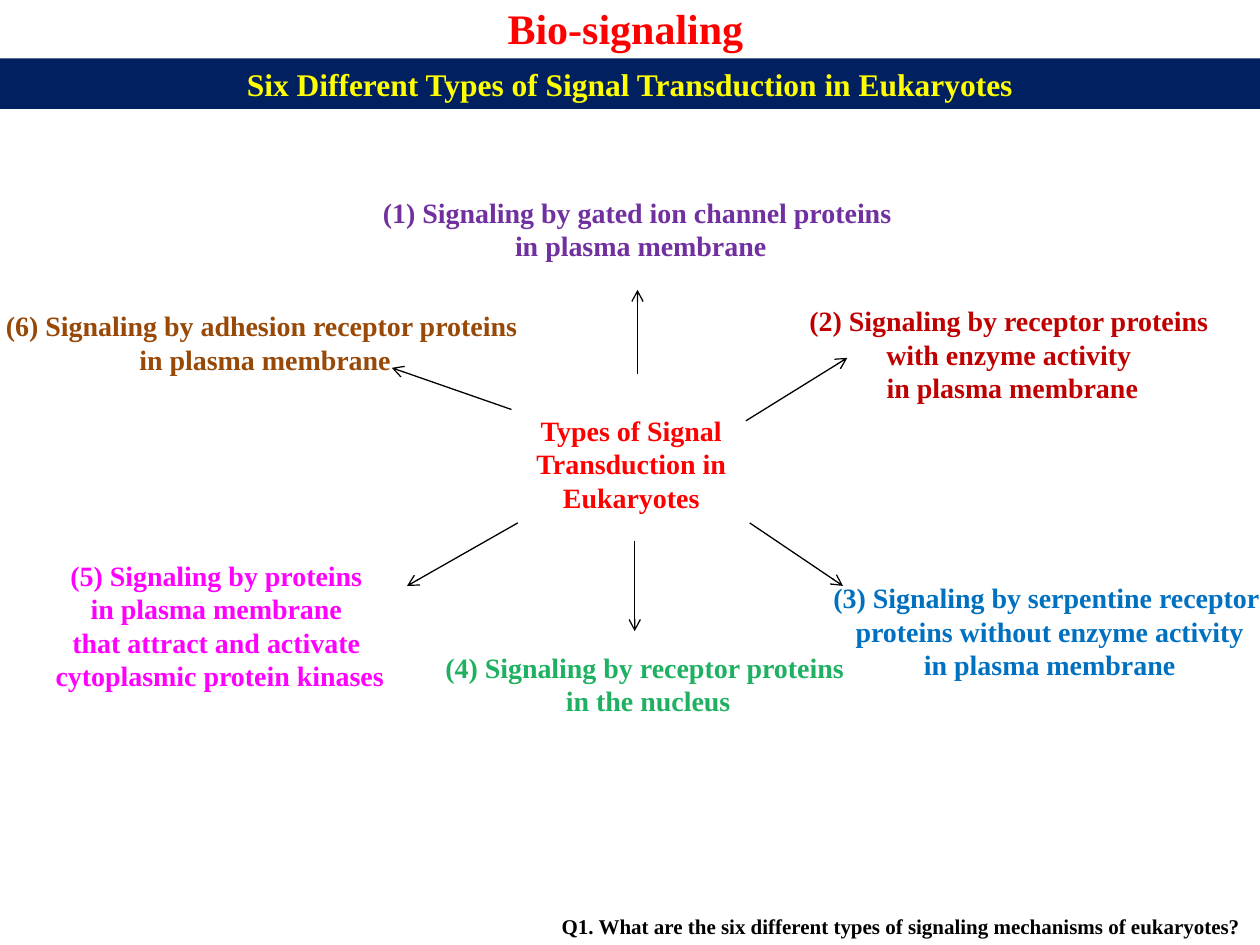
"""Build a slide on the six types of signal transduction in eukaryotes."""
import pptx
import pptx.dml.color
import pptx.enum.shapes
import pptx.enum.text
import pptx.oxml
import pptx.oxml.ns
import pptx.util

Pt = pptx.util.Pt
ALIGN = pptx.enum.text.PP_ALIGN
FONT = "Times New Roman"
COLORS = {
    "red": "FF0000",
    "navy": "002060",
    "yellow": "FFFF00",
    "black": "000000",
    "purple": "7030A0",
    "crimson": "C00000",
    "blue": "0070C0",
    "green": "1FB161",
    "magenta": "FF00FF",
    "brown": "984807",
}
SIGNALING_TYPES = [
    ("(1) Signaling by gated ion channel proteins \nin plasma membrane",
     "purple", (209.5, 108, 313.2, 46), (364.3, 213.8, 364.3, 165.6)),
    ("(2) Signaling by receptor proteins \nwith enzyme activity \nin plasma membrane",
     "crimson", (453.6, 169.9, 249.8, 65.5), (426.2, 240.5, 484.2, 204.5)),
    ("(3) Signaling by serpentine receptor \nproteins without enzyme activity\nin plasma membrane",
     "blue", (467.3, 328.3, 265, 65.5), (428.4, 298.8, 481.7, 334.8)),
    ("(4) Signaling by receptor proteins \nin the nucleus",
     "green", (245.5, 367.9, 249.8, 46), (362.7, 308.9, 362.7, 360.7)),
    ("(5) Signaling by proteins \nin plasma membrane \nthat attract and activate \ncytoplasmic protein kinases",
     "magenta", (23, 315.4, 205.2, 85), (295.9, 298.8, 232.6, 334.8)),
    ("(6) Signaling by adhesion receptor proteins \nin plasma membrane",
     "brown", (-5.8, 172.8, 314.6, 46), (292.3, 234, 223.9, 210.2)),
]


def rgb(name):
    """Return the named colour."""
    return pptx.dml.color.RGBColor.from_string(COLORS[name])


def write_text(holder, text, size, color, align, wrap=True):
    """Fill a shape with bold text, one paragraph per line."""
    frame = holder.text_frame
    frame.text = text
    frame.word_wrap = wrap
    frame.auto_size = pptx.enum.text.MSO_AUTO_SIZE.SHAPE_TO_FIT_TEXT
    for paragraph in frame.paragraphs:
        paragraph.alignment = align
        for run in paragraph.runs:
            run.font.name = FONT
            run.font.size = Pt(size)
            run.font.bold = True
            run.font.color.rgb = rgb(color)


def add_label(slide, box, text, size, color, align=ALIGN.CENTER, wrap=True):
    """Add a text box."""
    label = slide.shapes.add_textbox(*map(Pt, box))
    write_text(label, text, size, color, align, wrap)


def add_banner(slide, box, text):
    """Add the filled heading bar."""
    banner = slide.shapes.add_shape(
        pptx.enum.shapes.MSO_SHAPE.RECTANGLE, *map(Pt, box))
    banner.shadow.inherit = False
    banner.fill.solid()
    banner.fill.fore_color.rgb = rgb("navy")
    banner.line.fill.background()
    write_text(banner, text, 18, "yellow", ALIGN.CENTER)


def add_arrow(slide, ends):
    """Add a thin black arrow between two points."""
    arrow = slide.shapes.add_connector(
        pptx.enum.shapes.MSO_CONNECTOR.STRAIGHT, *map(Pt, ends))
    arrow.line.width = Pt(0.75)
    arrow.line.color.rgb = rgb("black")
    head = pptx.oxml.parse_xml(
        f'<a:tailEnd {pptx.oxml.ns.nsdecls("a")} type="arrow"/>')
    arrow.line._get_or_add_ln().append(head)
    effects = pptx.oxml.parse_xml(
        f'<a:effectLst {pptx.oxml.ns.nsdecls("a")}/>')
    arrow._element.spPr.append(effects)


def main():
    """Build and save the slide."""
    deck = pptx.Presentation()
    deck.slide_width, deck.slide_height = Pt(720), Pt(540)
    slide = deck.slides.add_slide(deck.slide_layouts[6])

    add_label(slide, (283, -2, 153.4, 36), "Bio-signaling", 24, "red", ALIGN.LEFT)
    add_banner(slide, (0, 33.3, 720, 29),
               "Six Different Types of Signal Transduction in Eukaryotes")
    add_label(slide, (288.7, 232.6, 144, 65.5),
              "Types of Signal Transduction in Eukaryotes", 16, "red")
    for text, color, box, arrow_ends in SIGNALING_TYPES:
        add_label(slide, box, text, 16, color, wrap=False)
        add_arrow(slide, arrow_ends)
    add_label(slide, (313.9, 518.4, 405.4, 21.6),
              "Q1. What are the six different types of signaling mechanisms of eukaryotes?",
              12, "black", ALIGN.LEFT)

    deck.save("out.pptx")


if __name__ == "__main__":
    main()
